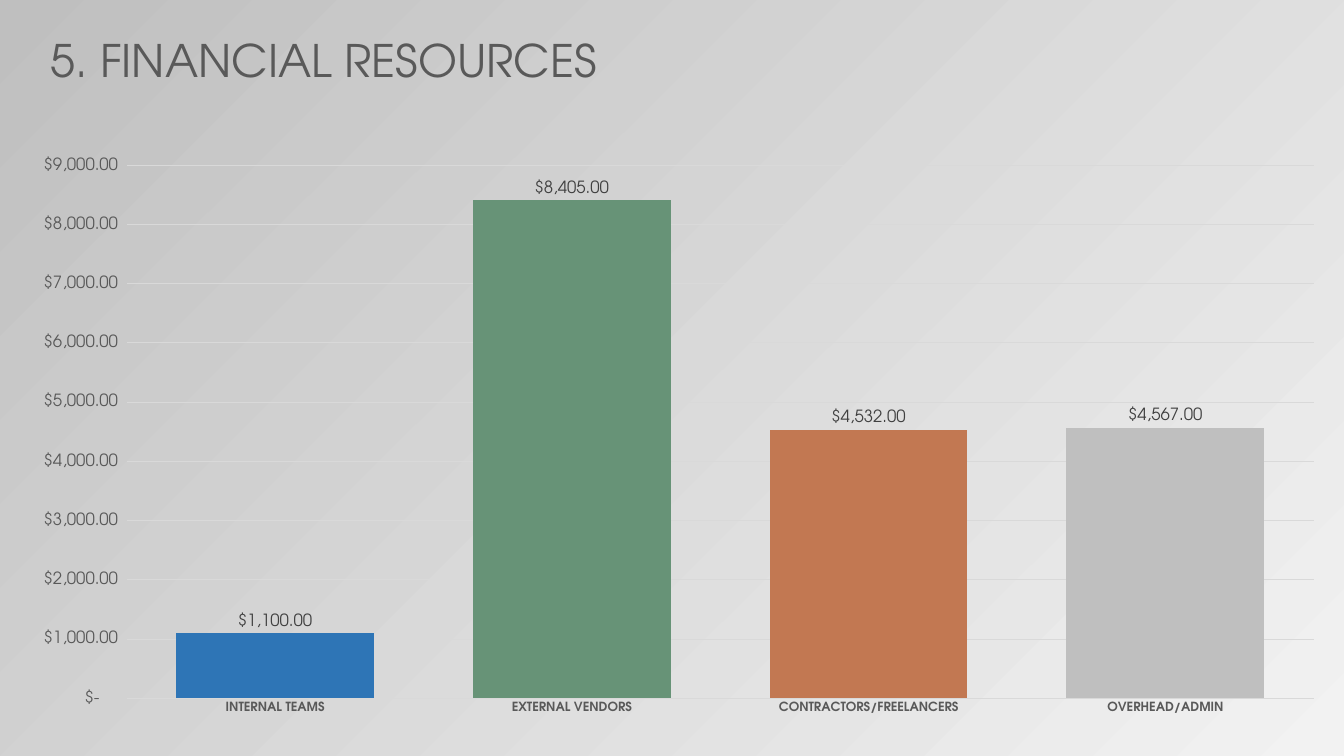
from dataclasses import dataclass

from lxml import etree
from pptx import Presentation
from pptx.chart.data import CategoryChartData
from pptx.dml.color import RGBColor
from pptx.enum.chart import XL_CHART_TYPE, XL_LABEL_POSITION, XL_TICK_MARK
from pptx.enum.text import MSO_ANCHOR, MSO_AUTO_SIZE, PP_ALIGN
from pptx.oxml.ns import qn
from pptx.util import Inches, Pt

COLUMN = XL_CHART_TYPE.COLUMN_CLUSTERED
OUTSIDE = XL_LABEL_POSITION.OUTSIDE_END
NO_TICK = XL_TICK_MARK.NONE
LEFT = PP_ALIGN.LEFT
TOP = MSO_ANCHOR.TOP
FIT_SHAPE = MSO_AUTO_SIZE.SHAPE_TO_FIT_TEXT


@dataclass(frozen=True)
class Theme:
    font: str = "TeX Gyre Adventor"
    text: str = "595959"
    label: str = "404040"
    rule: str = "D9D9D9"
    bg_light: str = "F2F2F2"
    bg_dark: str = "BFBFBF"
    bars: tuple = ("2E75B6", "679377", "C27852", "BFBFBF")
    title_size: int = 32
    value_size: int = 12
    category_size: int = 9
    rule_width: float = 0.75


THEME = Theme()
MONEY = r'_("$"* #,##0.00_);_("$"* \(#,##0.00\);_("$"* "-"??_);_(@_)'
COSTS = {
    "INTERNAL TEAMS": 1100,
    "EXTERNAL VENDORS": 8405,
    "CONTRACTORS/FREELANCERS": 4532,
    "OVERHEAD/ADMIN": 4567,
}
PLOT_AREA = {"x": 0.087, "y": 0.033, "w": 0.9, "h": 0.92}


def apply(target, values):
    for name, value in values.items():
        setattr(target, name, value)


def style_font(font, size, color, bold=False):
    apply(font, {"name": THEME.font, "size": Pt(size), "bold": bold})
    font.color.rgb = RGBColor.from_string(color)


def style_line(line):
    line.color.rgb = RGBColor.from_string(THEME.rule)
    line.width = Pt(THEME.rule_width)


def fill_solid(fill, color):
    fill.solid()
    fill.fore_color.rgb = RGBColor.from_string(color)


def set_background(s):
    fill = s.background.fill
    fill.gradient()
    fill.gradient_angle = 135
    for stop, color in zip(fill.gradient_stops, (THEME.bg_light, THEME.bg_dark)):
        stop.color.rgb = RGBColor.from_string(color)


def set_title(s, text):
    sp = s.shapes.title
    apply(sp, {"left": Inches(0.4), "top": Inches(0.27),
               "width": Inches(5.66), "height": Inches(0.64)})
    tf = sp.text_frame
    apply(tf, {"word_wrap": False, "auto_size": FIT_SHAPE, "vertical_anchor": TOP})
    p = tf.paragraphs[0]
    p.alignment = LEFT
    r = p.add_run()
    r.text = text
    style_font(r.font, THEME.title_size, THEME.text)


def place_plot(chart):
    # Fix the inner plot area as fractions of the chart frame
    plot_area = chart.element.find(".//" + qn("c:plotArea"))
    for old in plot_area.findall(qn("c:layout")):
        plot_area.remove(old)
    layout = etree.Element(qn("c:layout"))
    manual = etree.SubElement(layout, qn("c:manualLayout"))
    settings = {"layoutTarget": "inner", "xMode": "edge", "yMode": "edge", **PLOT_AREA}
    for tag, value in settings.items():
        etree.SubElement(manual, qn("c:" + tag)).set("val", str(value))
    plot_area.insert(0, layout)


def style_axes(chart):
    no_ticks = {"major_tick_mark": NO_TICK, "minor_tick_mark": NO_TICK}
    cat = chart.category_axis
    apply(cat, no_ticks)
    style_font(cat.tick_labels.font, THEME.category_size, THEME.text, bold=True)
    style_line(cat.format.line)

    val = chart.value_axis
    apply(val, {**no_ticks, "minimum_scale": 0, "maximum_scale": 9000,
                "major_unit": 1000, "has_major_gridlines": True})
    apply(val.tick_labels, {"number_format": MONEY, "number_format_is_linked": False})
    style_font(val.tick_labels.font, THEME.value_size, THEME.text)
    val.format.line.fill.background()
    style_line(val.major_gridlines.format.line)


def add_cost_chart(s):
    data = CategoryChartData(number_format=MONEY)
    data.categories = list(COSTS)
    data.add_series("Series 1", list(COSTS.values()))
    chart = s.shapes.add_chart(COLUMN, Inches(0.12), Inches(1.45),
                               Inches(13.08), Inches(5.75), data).chart
    apply(chart, {"has_legend": False, "has_title": False})
    chart.font.name = THEME.font
    place_plot(chart)
    style_axes(chart)

    # Bars, one colour per category
    plot = chart.plots[0]
    apply(plot, {"gap_width": 50, "vary_by_categories": False, "has_data_labels": True})
    series = plot.series[0]
    fill_solid(series.format.fill, THEME.bars[0])
    for i, color in enumerate(THEME.bars):
        fill_solid(series.points[i].format.fill, color)

    # Values above the bars
    labels = plot.data_labels
    apply(labels, {"show_value": True, "position": OUTSIDE,
                   "number_format": MONEY, "number_format_is_linked": False})
    style_font(labels.font, THEME.value_size, THEME.label)


def main():
    prs = Presentation()
    apply(prs, {"slide_width": Inches(13.33), "slide_height": Inches(7.5)})
    s = prs.slides.add_slide(prs.slide_layouts[5])
    set_background(s)
    set_title(s, "5. FINANCIAL RESOURCES")
    add_cost_chart(s)
    prs.save("out.pptx")


if __name__ == "__main__":
    main()
